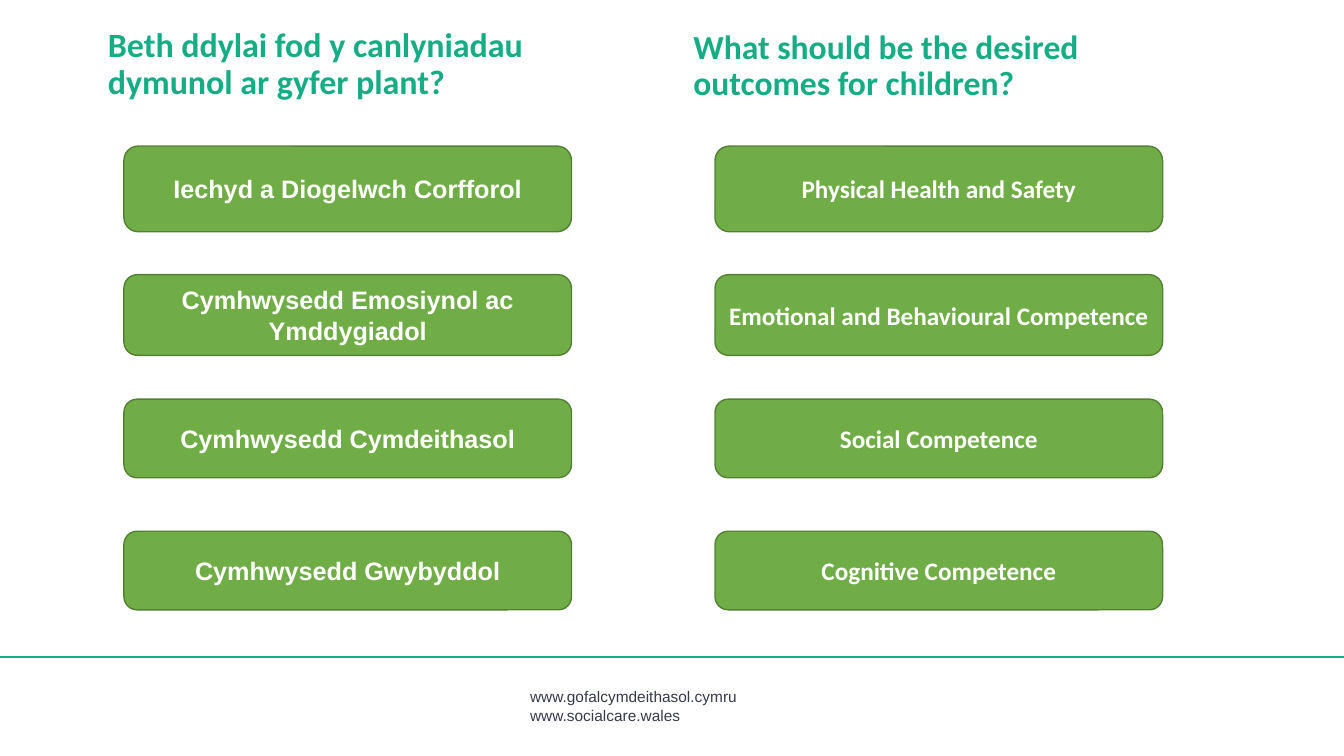
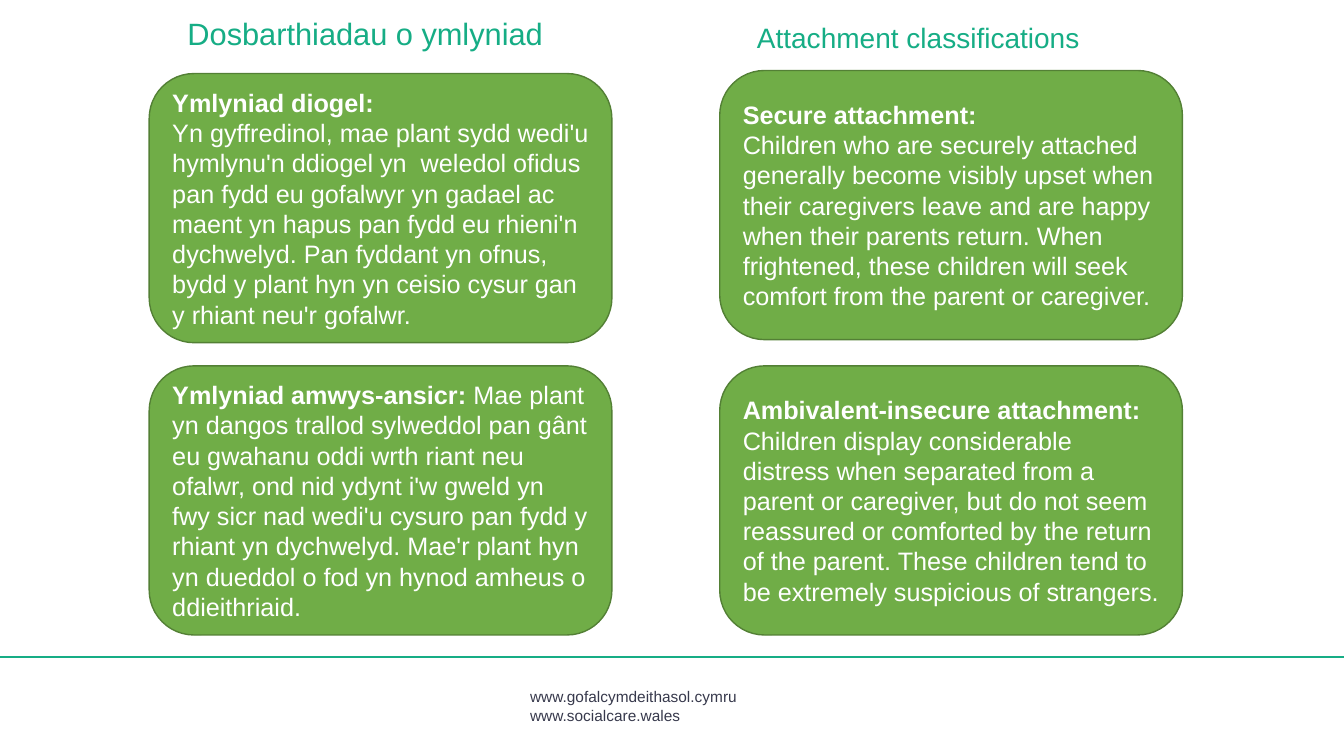
from lxml import etree
from pptx import Presentation
from pptx import util as u
from pptx.dml.color import RGBColor
from pptx.enum import shapes, text

TEAL, GREEN, DARK_GREEN = "16AD85", "70AD47", "538035"
WHITE, SLATE = "FFFFFF", "37394C"
LEFT, CENTER = text.PP_ALIGN.LEFT, text.PP_ALIGN.CENTER
TOP, MIDDLE = text.MSO_ANCHOR.TOP, text.MSO_ANCHOR.MIDDLE
color = RGBColor.from_string

deck = Presentation()
deck.slide_width, deck.slide_height = u.Inches(13.33), u.Inches(7.5)
title_only = deck.slide_layouts[5]


def area(left, top, width, height):
    """Turn percentages of the slide into left, top, width and height."""
    across, down = deck.slide_width / 100, deck.slide_height / 100
    return [int(left * across), int(top * down), int(width * across), int(height * down)]


def write(box, paras, font, size, ink, align=LEFT, anchor=TOP, spacing=None):
    """Fill a box with paragraphs, each a list of (words, bold) spans."""
    frame = box.text_frame
    frame.word_wrap = True
    frame.auto_size = text.MSO_AUTO_SIZE.NONE
    frame.vertical_anchor = anchor
    for index, spans in enumerate(paras):
        para = frame.add_paragraph() if index else frame.paragraphs[0]
        para.alignment = align
        para.line_spacing = spacing
        for words, bold in spans:
            span = para.add_run()
            span.text = words
            span.font.name, span.font.size = font, u.Pt(size)
            span.font.bold = bold
            span.font.color.rgb = color(ink)


# Content: headings are (words, area, size); boxes are (area, paragraphs, font)
outcome_rows = [
    (19.33, 11.33, "Iechyd a Diogelwch Corfforol", "Physical Health and Safety"),
    (36.33, 10.67, "Cymhwysedd Emosiynol ac Ymddygiadol", "Emotional and Behavioural Competence"),
    (52.8, 10.4, "Cymhwysedd Cymdeithasol", "Social Competence"),
    (70.27, 10.4, "Cymhwysedd Gwybyddol", "Cognitive Competence"),
]
outcome_boxes = []
for top, height, welsh, english in outcome_rows:
    outcome_boxes.append(((9.22, top, 33.3, height), [[(welsh, True)]], "Arial"))
    outcome_boxes.append(((53.2, top, 33.3, height), [[(english, True)]], "Calibri"))

attachment_texts = [
    (11.1, 9.73, [
        [("Ymlyniad diogel:", True)],
        [("Yn gyffredinol, mae plant sydd wedi'u hymlynu'n ddiogel yn  weledol ofidus pan "
          "fydd eu gofalwyr yn gadael ac maent yn hapus pan fydd eu rhieni'n dychwelyd. "
          "Pan fyddant yn ofnus, bydd y plant hyn yn ceisio cysur gan y rhiant neu'r "
          "gofalwr.", False)]]),
    (53.55, 9.33, [
        [("Secure attachment:", True)],
        [("Children who are securely attached generally become visibly upset when their "
          "caregivers leave and are happy when their parents return. When frightened, "
          "these children will seek comfort from the parent or caregiver.", False)]]),
    (11.1, 48.4, [
        [("Ymlyniad amwys-ansicr: ", True),
         ("Mae plant yn dangos trallod sylweddol pan gânt eu gwahanu oddi wrth riant neu "
          "ofalwr, ond nid ydynt i'w gweld yn fwy sicr nad wedi'u cysuro pan fydd y rhiant "
          "yn dychwelyd. Mae'r plant hyn yn dueddol o fod yn hynod amheus o "
          "ddieithriaid.", False)]]),
    (53.55, 48.4, [
        [("Ambivalent-insecure attachment: ", True),
         ("Children display considerable distress when separated from a parent or "
          "caregiver, but do not seem reassured or comforted by the return of the parent. "
          "These children tend to be extremely suspicious of strangers.", False)]]),
]
attachment_boxes = [((left, top, 34.43, 35.6), paras, "Arial")
                    for left, top, paras in attachment_texts]

pages = [
    {"font": "Calibri", "bold": True, "align": CENTER, "boxes": outcome_boxes, "headings": [
        ("Beth ddylai fod y canlyniadau dymunol ar gyfer plant?", (7.28, 3.07, 37.2, 15.07), 24.3),
        ("What should be the desired outcomes for children?", (50.85, 3.33, 38.18, 16), 24)]},
    {"font": "Arial", "bold": False, "align": LEFT, "boxes": attachment_boxes, "headings": [
        ("Dosbarthiadau o ymlyniad", (13.2, 1.87, 30.23, 15.07), 22),
        ("Attachment classifications", (55.58, 2.53, 30.3, 5.6), 20)]},
]

for content in pages:
    page = deck.slides.add_slide(title_only)

    # Welsh title and English heading
    for number, (words, place, size) in enumerate(content["headings"]):
        heading = page.shapes.add_textbox(*area(*place)) if number else page.shapes.title
        heading.left, heading.top, heading.width, heading.height = area(*place)
        write(heading, [[(words, content["bold"])]], content["font"], size, TEAL, spacing=0.9)

    # Green rounded boxes
    for place, paras, font in content["boxes"]:
        box = page.shapes.add_shape(shapes.MSO_SHAPE.ROUNDED_RECTANGLE, *area(*place))
        box.shadow.inherit = False
        box.fill.solid()
        box.fill.fore_color.rgb = color(GREEN)
        box.line.color.rgb = color(DARK_GREEN)
        box.line.width = u.Pt(1)
        write(box, paras, font, 18, WHITE, content["align"], MIDDLE)

# Shared footer, drawn once and moved to the layout
footer = page.shapes.add_textbox(*area(38.7, 90.27, 22.65, 6.13))
write(footer, [[("www.gofalcymdeithasol.cymru", False)], [("www.socialcare.wales", False)]],
      "Arial", 11, SLATE)
start_x, rule_y, rule_width, _ = area(0, 86.93, 100, 0)
rule = page.shapes.add_connector(shapes.MSO_CONNECTOR.STRAIGHT,
                                 start_x, rule_y, rule_width, rule_y)
rule.line.color.rgb = color(TEAL)
rule.line.width = u.Pt(1)
etree.SubElement(rule.element.spPr,
                 "{http://schemas.openxmlformats.org/drawingml/2006/main}effectLst")
for part in (footer, rule):
    title_only.shapes.element.append(part.element)

deck.save("out.pptx")
